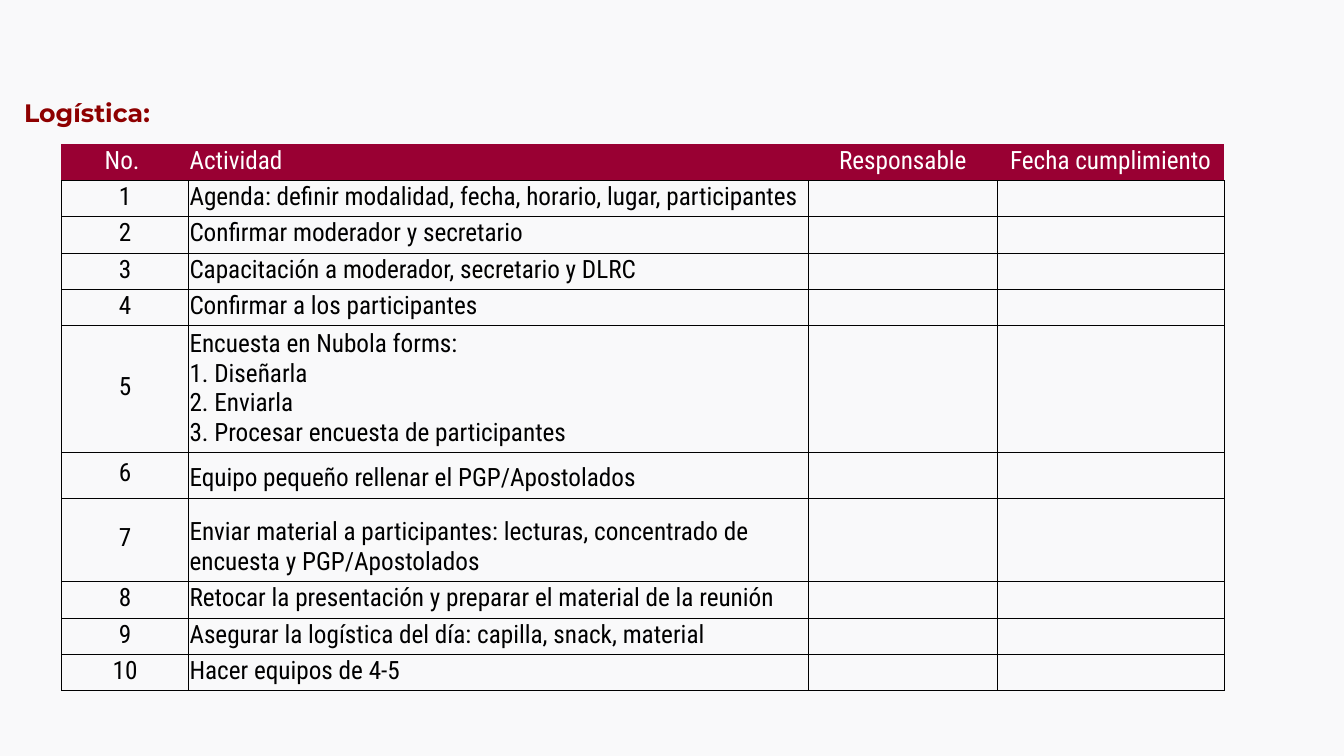
from pptx import Presentation, util as u
from pptx.dml.color import RGBColor
from pptx.enum import text
from pptx.oxml.xmlchemy import OxmlElement

BACKGROUND = RGBColor(0xF9, 0xF9, 0xFA)
TITLE_RED = RGBColor(0x8E, 0x00, 0x00)
HEADER_RED = RGBColor(0x99, 0x00, 0x33)
WHITE = RGBColor(0xFF, 0xFF, 0xFF)
BLACK = RGBColor(0x00, 0x00, 0x00)

HEADERS = ["No. ", "Actividad", "Responsable", "Fecha cumplimiento"]
ACTIVITIES = [
    "Agenda: definir modalidad, fecha, horario, lugar, participantes",
    "Confirmar moderador y secretario",
    "Capacitación a moderador, secretario y DLRC",
    "Confirmar a los participantes",
    "Encuesta en Nubola forms:\n1. Diseñarla\n2. Enviarla\n3. Procesar encuesta de participantes",
    "Equipo pequeño rellenar el PGP/Apostolados",
    "Enviar material a participantes: lecturas, concentrado de encuesta y PGP/Apostolados",
    "Retocar la presentación y preparar el material de la reunión",
    "Asegurar la logística del día: capilla, snack, material",
    "Hacer equipos de 4-5",
]
COLUMN_WIDTHS = [1.26, 6.15, 1.87, 2.25]
ROW_HEIGHT = 0.35
TALL_ROWS = {5: 1.26, 6: 0.45, 7: 0.83}


class SlideBuilder:
    title_font = "Montserrat"
    table_font = "Roboto Condensed"
    size = u.Pt(18)
    border_width = u.Pt(0.5)

    def __init__(self, deck):
        self.page = deck.slides.add_slide(deck.slide_layouts[6])
        self.page.background.fill.solid()
        self.page.background.fill.fore_color.rgb = BACKGROUND

    def add_words(self, para, words, font, color, bold=False):
        for index, line in enumerate(words.split("\n")):
            if index:
                para.add_line_break()
            span = para.add_run()
            span.text = line
            span.font.name = font
            span.font.size = self.size
            span.font.bold = bold
            span.font.color.rgb = color

    def title(self, words, left, top, width, height):
        box = self.page.shapes.add_textbox(*map(u.Inches, (left, top, width, height)))
        box.text_frame.word_wrap = True
        self.add_words(box.text_frame.paragraphs[0], words, self.title_font, TITLE_RED, bold=True)

    def borders(self, cell, visible):
        properties = cell._tc.get_or_add_tcPr()
        for index, side in enumerate("LRTB"):
            line = OxmlElement(f"a:ln{side}")
            line.set("w", str(self.border_width))
            if side in visible:
                fill = OxmlElement("a:solidFill")
                color = OxmlElement("a:srgbClr")
                color.set("val", str(BLACK))
                fill.append(color)
            else:
                fill = OxmlElement("a:noFill")
            line.append(fill)
            properties.insert(index, line)

    def cell(self, cell, words, centered, header, middle):
        cell.margin_left = cell.margin_right = cell.margin_top = u.Inches(0.01)
        cell.margin_bottom = u.Inches(0.05)
        cell.vertical_anchor = text.MSO_ANCHOR.MIDDLE if middle else text.MSO_ANCHOR.BOTTOM
        if header:
            cell.fill.solid()
            cell.fill.fore_color.rgb = HEADER_RED
        else:
            cell.fill.background()
        self.borders(cell, "B" if header else "LRTB")
        para = cell.text_frame.paragraphs[0]
        para.alignment = text.PP_ALIGN.CENTER if centered else text.PP_ALIGN.LEFT
        if words:
            self.add_words(para, words, self.table_font, WHITE if header else BLACK)
        else:
            ending = OxmlElement("a:endParaRPr")
            ending.set("sz", "1200")
            para._p.append(ending)

    def table(self, rows, left, top):
        heights = [TALL_ROWS.get(index, ROW_HEIGHT) for index in range(len(rows))]
        frame = self.page.shapes.add_table(
            len(rows), len(COLUMN_WIDTHS), u.Inches(left), u.Inches(top),
            u.Inches(sum(COLUMN_WIDTHS)), u.Inches(sum(heights)))
        table = frame.table
        table.first_row = table.horz_banding = False
        for column, width in zip(table.columns, COLUMN_WIDTHS):
            column.width = u.Inches(width)
        for row_index, (row, height) in enumerate(zip(rows, heights)):
            table.rows[row_index].height = u.Inches(height)
            for column_index, words in enumerate(row):
                self.cell(
                    table.cell(row_index, column_index), words,
                    centered=column_index != 1,
                    header=row_index == 0,
                    middle=column_index == 0 and row_index in TALL_ROWS)


def main():
    deck = Presentation()
    deck.slide_width, deck.slide_height = u.Inches(13.33), u.Inches(7.5)
    builder = SlideBuilder(deck)
    builder.title("Logística:", 0.14, 0.92, 10.19, 0.4)
    rows = [HEADERS]
    rows += [[str(number), activity, "", ""] for number, activity in enumerate(ACTIVITIES, 1)]
    builder.table(rows, 0.61, 1.43)
    deck.save("out.pptx")


if __name__ == "__main__":
    main()
